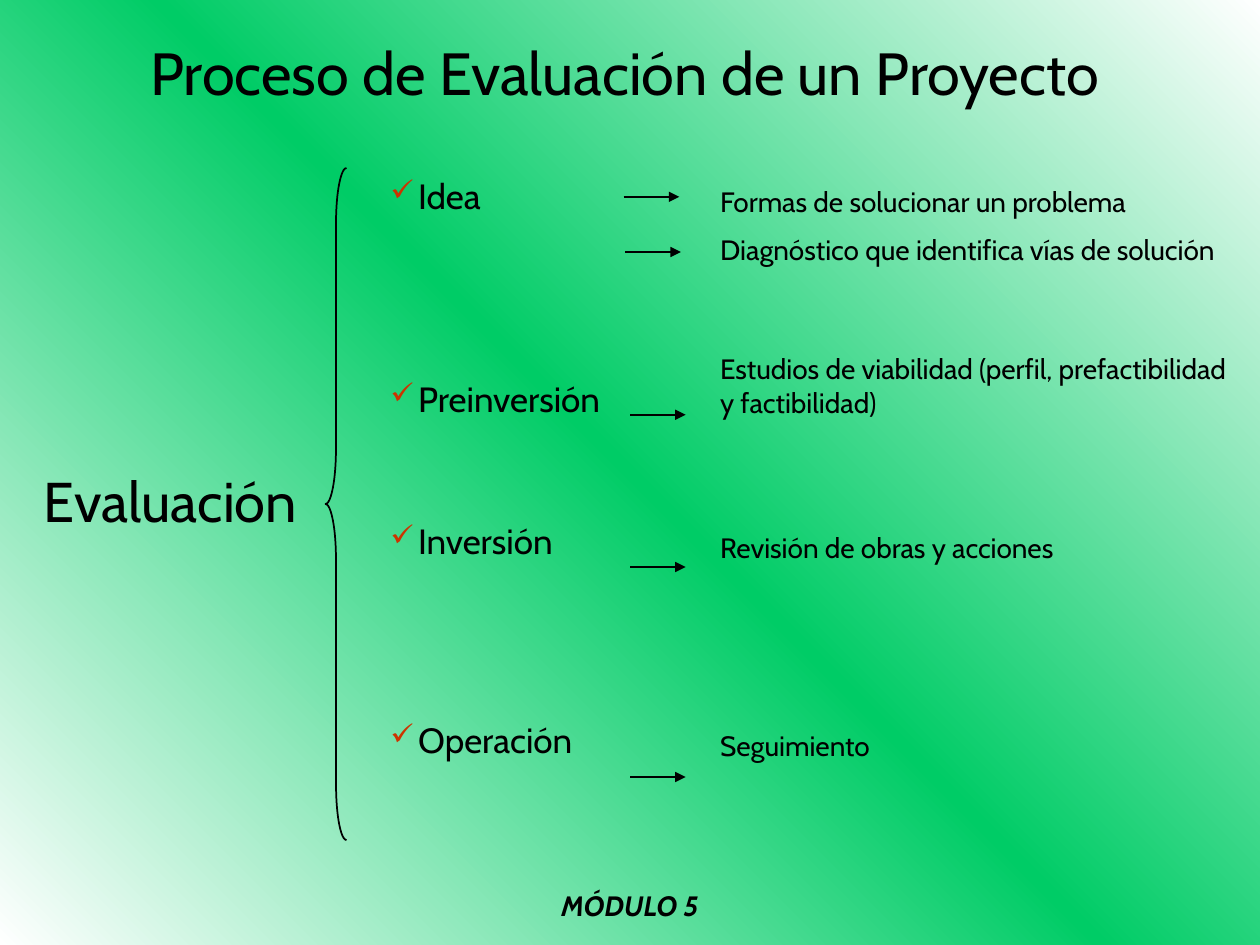
from copy import deepcopy

from lxml import etree
from pptx import Presentation
from pptx.dml.color import RGBColor
from pptx.enum.shapes import MSO_CONNECTOR, MSO_SHAPE
from pptx.enum.text import MSO_ANCHOR, MSO_AUTO_SIZE, PP_ALIGN
from pptx.oxml.ns import qn
from pptx.util import Inches, Pt

BLACK = RGBColor(0x00, 0x00, 0x00)
WHITE = RGBColor(0xFF, 0xFF, 0xFF)
GREEN = RGBColor(0x00, 0xCC, 0x66)
RED = RGBColor(0xCC, 0x33, 0x00)
FONT = "Cabin"

LEFT, CENTER = PP_ALIGN.LEFT, PP_ALIGN.CENTER
TOP, MIDDLE = MSO_ANCHOR.TOP, MSO_ANCHOR.MIDDLE
BRACE = MSO_SHAPE.LEFT_BRACE
STRAIGHT = MSO_CONNECTOR.STRAIGHT
NO_FIT = MSO_AUTO_SIZE.NONE
TITLE_ONLY = 5

# The slide is a grid of 120 columns by 90 rows of square cells.
COLUMNS, ROWS = 120, 90
CELL = Inches(10) / COLUMNS

# Boxes in cells: left, top, width, height
TITLE_BOX = (3, 2, 113, 11)
SUBJECT_BOX = (3, 43.8, 31, 7.7)
BRACE_BOX = (31, 16, 2, 64)
PHASES_BOX = (36, 16, 25, 60)
ARROWS_BOX = (59.4, 16, 5.9, 60)
OUTCOMES_BOX = (67.4, 17, 51.5, 62)
FOOTER_BOX = (0, 84, 120, 4.4)

# Text and the space before it in points
PHASES = [("Idea", 0), ("Preinversión", 92), ("Inversión", 57), ("Operación", 90)]
OUTCOMES = [
    ("Formas de solucionar un problema", 0),
    ("Diagnóstico que identifica vías de solución", 8),
    ("Estudios de viabilidad (perfil, prefactibilidad y factibilidad)", 49),
    ("Revisión de obras y acciones", 64),
    ("Seguimiento", 94),
]
# Column and row of each arrow within its box
ARROWS = [(0, 2.75), (0.15, 8), (0.6, 23.5), (0.6, 38), (0.6, 58)]
ARROW_LENGTH = 5.3


def cells(*values):
    return [round(value * CELL) for value in values]


def add_check(paragraph):
    """Give the paragraph a red check mark as its bullet."""
    properties = paragraph._p.get_or_add_pPr()
    indent = Inches(0.22)
    properties.set("marL", str(indent))
    properties.set("indent", str(-indent))
    color = etree.SubElement(properties, qn("a:buClr"))
    etree.SubElement(color, qn("a:srgbClr"), val=str(RED))
    etree.SubElement(properties, qn("a:buSzPct"), val="85000")
    etree.SubElement(properties, qn("a:buChar"), char="✓")


def write_text(shape, lines, size, align=LEFT, anchor=TOP, spacing=None,
               bold=False, italic=False, checked=False):
    """Fill a shape with (text, space before) lines."""
    frame = shape.text_frame
    frame.word_wrap = True
    frame.auto_size = NO_FIT
    frame.vertical_anchor = anchor
    for index, (text, before) in enumerate(lines):
        paragraph = frame.add_paragraph() if index else frame.paragraphs[0]
        paragraph.alignment = align
        paragraph.space_before = Pt(before)
        if spacing:
            paragraph.line_spacing = spacing
        if checked:
            add_check(paragraph)
        run = paragraph.add_run()
        run.text = text
        run.font.name = FONT
        run.font.size = Pt(size)
        run.font.bold = bold
        run.font.italic = italic
        run.font.color.rgb = BLACK


def add_text(slide, box, lines, size, **formatting):
    write_text(slide.shapes.add_textbox(*cells(*box)), lines, size, **formatting)


def paint_background(slide):
    """Diagonal gradient, white to green to white."""
    fill = slide.background.fill
    fill.gradient()
    fill.gradient_angle = 45
    stops = slide.element.find(".//" + qn("a:gsLst"))
    stops.append(deepcopy(stops[-1]))
    for stop, position, color in zip(fill.gradient_stops, (0, 0.5, 1), (WHITE, GREEN, WHITE)):
        stop.position = position
        stop.color.rgb = color


def place_title(slide, box, text):
    title = slide.shapes.title
    title.left, title.top, title.width, title.height = cells(*box)
    write_text(title, [(text, 0)], 34, align=CENTER, anchor=MIDDLE, spacing=0.8)


def add_brace(slide, box):
    brace = slide.shapes.add_shape(BRACE, *cells(*box))
    brace.shadow.inherit = False
    brace.adjustments[0] = 2.667
    brace.adjustments[1] = 0.5
    brace.fill.background()
    brace.line.color.rgb = BLACK
    brace.line.width = Pt(1)


def add_arrows(slide, box, arrows):
    left, top = box[:2]
    for column, row in arrows:
        x, y = left + column, top + row
        arrow = slide.shapes.add_connector(STRAIGHT, *cells(x, y, x + ARROW_LENGTH, y))
        arrow.line.color.rgb = BLACK
        arrow.line.width = Pt(1)
        etree.SubElement(arrow.line._get_or_add_ln(), qn("a:tailEnd"), type="triangle")
        etree.SubElement(arrow._element.spPr, qn("a:effectLst"))


def main():
    presentation = Presentation()
    presentation.slide_width, presentation.slide_height = cells(COLUMNS, ROWS)
    slide = presentation.slides.add_slide(presentation.slide_layouts[TITLE_ONLY])

    paint_background(slide)
    place_title(slide, TITLE_BOX, "Proceso de Evaluación de un Proyecto")

    # Subject, opened by the brace into phases and their outcomes
    add_text(slide, SUBJECT_BOX, [("Evaluación", 0)], 32)
    add_brace(slide, BRACE_BOX)
    add_text(slide, PHASES_BOX, PHASES, 20, checked=True)
    add_text(slide, OUTCOMES_BOX, OUTCOMES, 16)
    add_arrows(slide, ARROWS_BOX, ARROWS)

    # Footer
    add_text(slide, FOOTER_BOX, [("MÓDULO 5", 0)], 16, align=CENTER, bold=True, italic=True)

    presentation.save("out.pptx")


if __name__ == "__main__":
    main()
